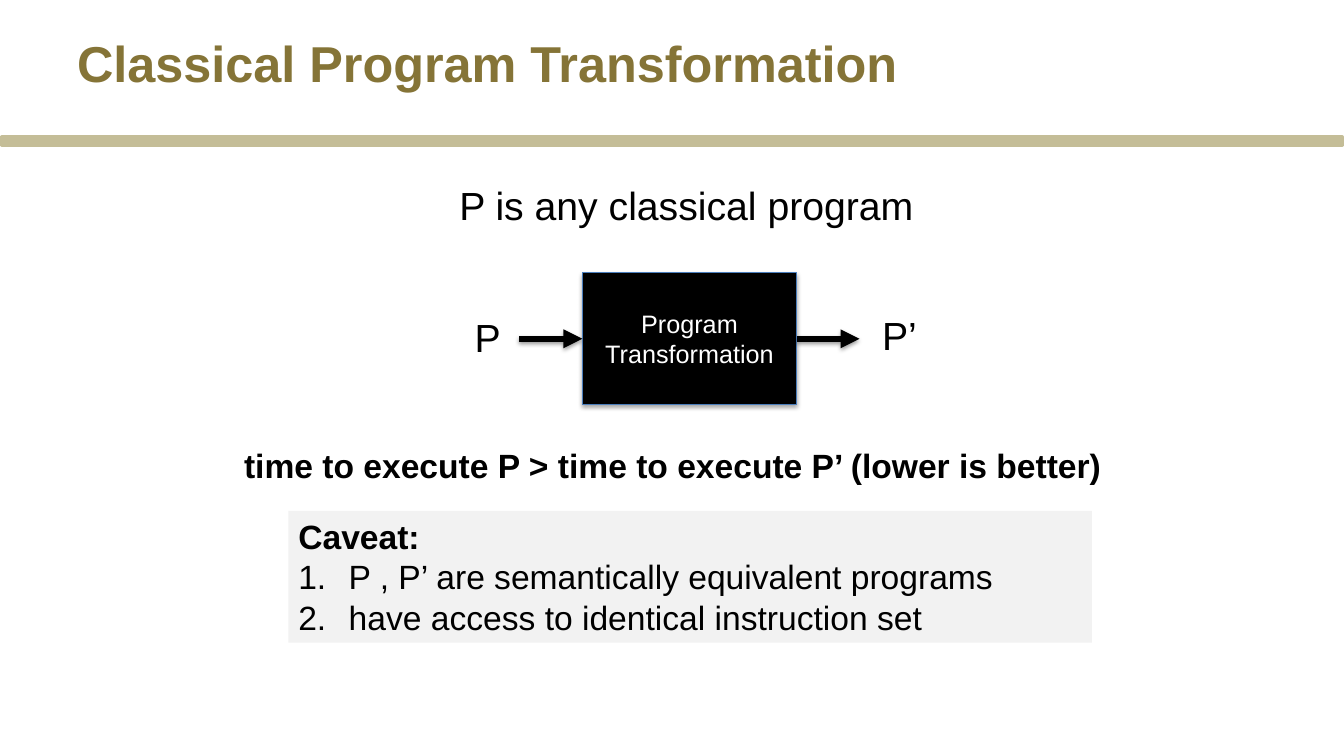
"""Build the Classical Program Transformation slide."""
from dataclasses import dataclass
from typing import Any

import pptx
import pptx.dml.color
import pptx.enum.shapes
import pptx.enum.text
import pptx.oxml
import pptx.oxml.ns
import pptx.util

Pt = pptx.util.Pt
Shapes = pptx.enum.shapes.MSO_SHAPE
Align = pptx.enum.text.PP_ALIGN
Anchor = pptx.enum.text.MSO_ANCHOR

FONT = "Arial"
NAMESPACE = pptx.oxml.ns.nsdecls("a")
ARROW_LENGTH = 45
NUMBER_INDENT = 36


@dataclass
class Line:
    text: str
    size: float
    color: str = "000000"
    bold: bool = False
    align: Any = Align.LEFT
    numbered: bool = False


@dataclass
class Block:
    left: float
    top: float
    width: float
    height: float
    lines: list[Line]
    wrap: bool = True
    fill: str = ""
    top_inset: float = 3.6


def color_of(hex_string: str) -> pptx.dml.color.RGBColor:
    """Turn a hex string into a colour."""
    return pptx.dml.color.RGBColor.from_string(hex_string)


def write_lines(shape: Any, lines: list[Line]) -> None:
    """Write one paragraph for each line."""
    frame = shape.text_frame
    for index, line in enumerate(lines):
        paragraph = frame.add_paragraph() if index else frame.paragraphs[0]
        paragraph.text = line.text
        paragraph.alignment = line.align
        if line.numbered:
            properties = paragraph._p.get_or_add_pPr()
            properties.set("marL", str(Pt(NUMBER_INDENT)))
            properties.set("indent", str(-Pt(NUMBER_INDENT)))
            properties.append(pptx.oxml.parse_xml(f'<a:buAutoNum {NAMESPACE} type="arabicPeriod"/>'))
        formats = {"name": FONT, "size": Pt(line.size), "bold": line.bold}
        for name, value in formats.items():
            setattr(paragraph.font, name, value)
        paragraph.font.color.rgb = color_of(line.color)


def add_block(slide: Any, block: Block) -> None:
    """Add a text box with its lines."""
    shape = slide.shapes.add_textbox(Pt(block.left), Pt(block.top), Pt(block.width), Pt(block.height))
    formats = {"word_wrap": block.wrap, "margin_top": Pt(block.top_inset)}
    for name, value in formats.items():
        setattr(shape.text_frame, name, value)
    if block.fill:
        shape.fill.solid()
        shape.fill.fore_color.rgb = color_of(block.fill)
    write_lines(shape, block.lines)


def add_box(slide: Any, kind: Any, left: float, top: float, width: float, height: float, fill: str) -> Any:
    """Add a filled preset shape without line or shadow."""
    shape = slide.shapes.add_shape(kind, Pt(left), Pt(top), Pt(width), Pt(height))
    shape.shadow.inherit = False
    shape.fill.solid()
    shape.fill.fore_color.rgb = color_of(fill)
    shape.line.fill.background()
    return shape


def add_shadow(shape: Any, opacity: int, distance: float) -> None:
    """Give a shape a soft shadow straight below it."""
    properties = shape._element.spPr
    for effects in properties.findall(pptx.oxml.ns.qn("a:effectLst")):
        properties.remove(effects)
    properties.append(pptx.oxml.parse_xml(
        f'<a:effectLst {NAMESPACE}><a:outerShdw blurRad="{Pt(3.1)}" dist="{Pt(distance)}" '
        f'dir="5400000" rotWithShape="0"><a:srgbClr val="000000">'
        f'<a:alpha val="{opacity * 1000}"/></a:srgbClr></a:outerShdw></a:effectLst>'))


def add_arrow(slide: Any, left: float, middle: float) -> Any:
    """Add a thick arrow pointing right."""
    arrow = slide.shapes.add_connector(
        pptx.enum.shapes.MSO_CONNECTOR.STRAIGHT,
        Pt(left), Pt(middle), Pt(left + ARROW_LENGTH), Pt(middle))
    arrow.line.width = Pt(4.5)
    arrow.line.color.rgb = color_of("000000")
    arrow.line._get_or_add_ln().append(pptx.oxml.parse_xml(f'<a:tailEnd {NAMESPACE} type="triangle"/>'))
    add_shadow(arrow, 38, 1.6)
    return arrow


def add_transformation(slide: Any, left: float, top: float, width: float, height: float) -> None:
    """Add the black box with its input and output arrows."""
    box = add_box(slide, Shapes.RECTANGLE, left, top, width, height, "000000")
    box.line.color.rgb = color_of("4B7EBC")
    box.line.width = Pt(0.75)
    box.text_frame.word_wrap = True
    box.text_frame.vertical_anchor = Anchor.MIDDLE
    write_lines(box, [Line("Program Transformation", 18, "FFFFFF", align=Align.CENTER)])
    add_shadow(box, 35, 1.8)
    middle = top + height / 2
    add_arrow(slide, left - ARROW_LENGTH, middle).end_connect(box, 1)
    add_arrow(slide, left + width, middle).begin_connect(box, 3)


BLOCKS = [
    Block(48, 16, 640, 90, [Line("Classical Program Transformation", 36, "857437", True)], top_inset=7.2),
    Block(332, 220, 33, 43, [Line("P", 28)], wrap=False),
    Block(623, 219, 40, 43, [Line("P’", 28)], wrap=False),
    Block(206, 365, 574, 94, [
        Line("Caveat:", 24, bold=True),
        Line("P , P’ are semantically equivalent programs", 24, numbered=True),
        Line("have access to identical instruction set", 24, numbered=True),
    ], fill="F2F2F2"),
    Block(24, 314, 913, 36, [
        Line("time to execute P > time to execute P’ (lower is better)", 24, bold=True, align=Align.CENTER),
    ]),
    Block(321, 126, 343, 41, [Line("P is any classical program", 28)], wrap=False),
]


def main() -> None:
    """Build and save the slide."""
    presentation = pptx.Presentation()
    presentation.slide_width = Pt(960)
    presentation.slide_height = Pt(540)
    slide = presentation.slides.add_slide(presentation.slide_layouts[6])
    add_box(slide, Shapes.ROUNDED_RECTANGLE, 0, 96.5, 960, 8.5, "C4BD97")
    add_transformation(slide, 416, 195, 153, 94)
    for block in BLOCKS:
        add_block(slide, block)
    presentation.save("out.pptx")


if __name__ == "__main__":
    main()
